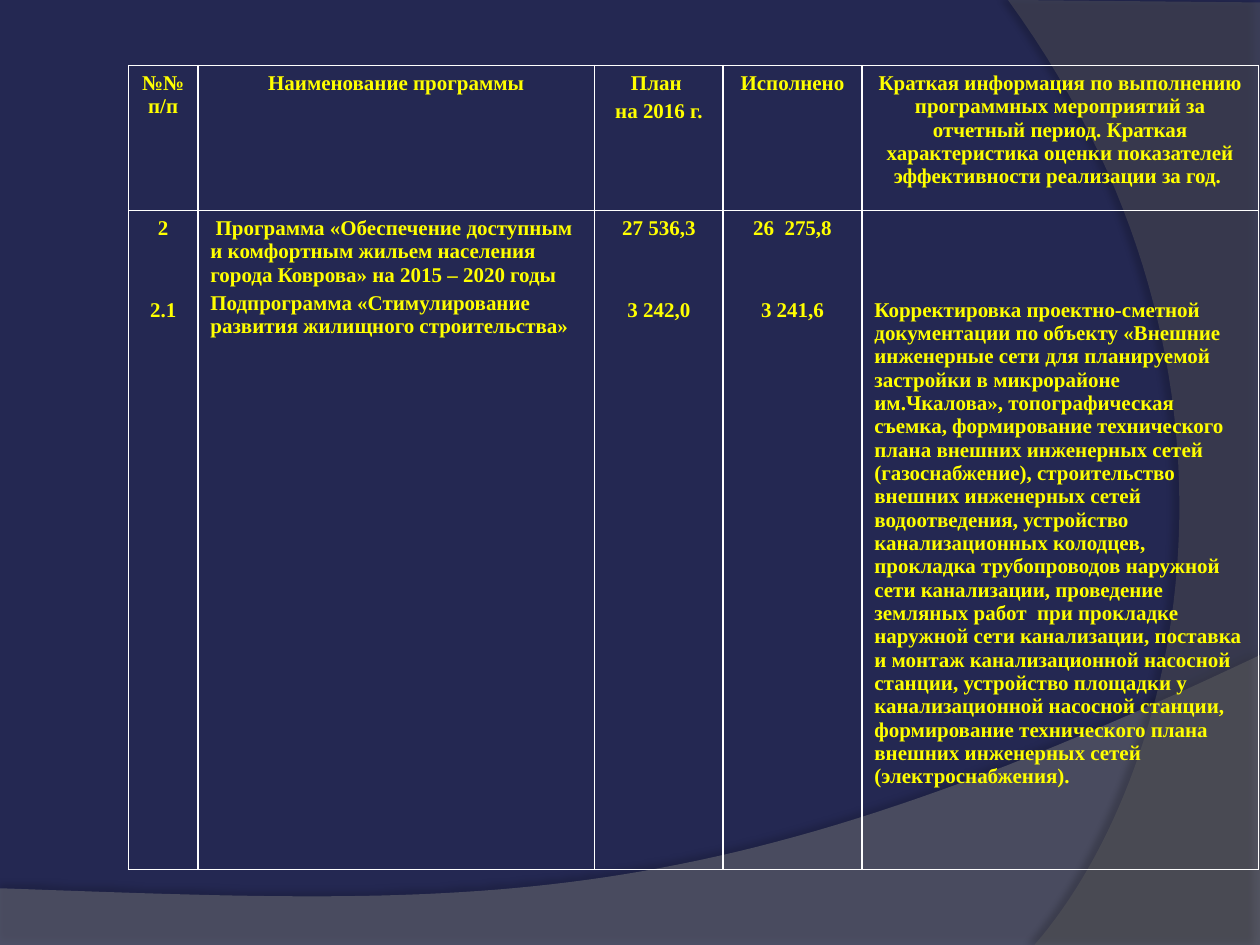
"""Build the slide with the housing programme table on a dark curved background."""
from lxml import etree
from pptx import Presentation
from pptx.dml.color import RGBColor
from pptx.enum.text import PP_ALIGN as Align
from pptx.oxml import parse_xml
from pptx.oxml.ns import nsdecls, qn
from pptx.util import Inches, Pt

FONT, SIZE, YELLOW, WHITE, NAVY = "Times New Roman", 12, "FFFF00", "FFFFFF", "242852"
TABLE_AT = (1.02, 0.52)
COLS = [0.55, 3.15, 1.02, 1.1, 3.15]
ROWS = [1.15, 5.23]
PAR_GAP, SUB_GAP, SUB_TOP = 2.7, 33.5, 0.7

HEADER = [
    "№№ п/п",
    "Наименование программы",
    "План \nна 2016 г.",
    "Исполнено",
    "Краткая информация по выполнению программных мероприятий за отчетный период. "
    "Краткая характеристика оценки показателей эффективности реализации за год. ",
]
BODY = [
    "2\n2.1",
    " Программа «Обеспечение доступным и комфортным жильем населения города Коврова» "
    "на 2015 – 2020 годы\nПодпрограмма «Стимулирование развития жилищного строительства»",
    "27 536,3\n3 242,0",
    "26  275,8\n3 241,6",
    "Корректировка проектно-сметной документации по объекту «Внешние инженерные сети "
    "для планируемой застройки в микрорайоне им.Чкалова», топографическая съемка, "
    "формирование технического плана внешних инженерных сетей (газоснабжение), "
    "строительство внешних инженерных сетей водоотведения, устройство канализационных "
    "колодцев, прокладка трубопроводов наружной сети канализации, проведение земляных "
    "работ  при прокладке наружной сети канализации, поставка и монтаж канализационной "
    "насосной станции, устройство площадки у канализационной насосной станции, "
    "формирование технического плана внешних инженерных сетей (электроснабжения).",
]
LEFT_COLS = (1, 4)

WAVES = [
    dict(corners=[(0, 7.05), (0, 7.5), (10, 7.5), (10, 5.2)],
         curve=[(10, 5.2), (5.59, 7.29), (3.91, 7.19), (0, 7.05)],
         color="7F7F7F", alpha=45, shadow=(35, 3.5, 270)),
    dict(corners=[(10, 0.02), (10, 7.5), (8.21, 7.5)],
         curve=[(8.21, 7.5), (9.35, 6.19), (10.18, 3), (8, 0)],
         color="5E5E5E", alpha=40, shadow=(45, 4, 180)),
]


def rgb(value):
    return RGBColor.from_string(value)


def bezier(points, steps=60):
    for i in range(1, steps + 1):
        t = i / steps
        weights = ((1 - t) ** 3, 3 * t * (1 - t) ** 2, 3 * t * t * (1 - t), t ** 3)
        yield tuple(sum(w * p[axis] for w, p in zip(weights, points)) for axis in (0, 1))


def add_wave(s, corners, curve, color, alpha, shadow):
    outline = [(Inches(x), Inches(y)) for x, y in [*corners, *bezier(curve)]]
    builder = s.shapes.build_freeform(*outline[0])
    builder.add_line_segments(outline[1:], close=True)
    sp = builder.convert_to_shape()
    sp.fill.solid()
    sp.fill.fore_color.rgb = rgb(color)
    sp.line.fill.background()
    sp.shadow.inherit = False
    clr = sp.fill._xPr.find(qn("a:solidFill"))[0]
    etree.SubElement(clr, qn("a:alpha")).set("val", str(alpha * 1000))
    opacity, dist, angle = shadow
    sp._element.spPr.find(qn("a:effectLst")).append(parse_xml(
        f'<a:outerShdw {nsdecls("a")} blurRad="{Pt(4)}" dist="{Pt(dist)}" '
        f'dir="{angle * 60000}" algn="ctr" rotWithShape="0"><a:srgbClr val="000000">'
        f'<a:alpha val="{opacity * 1000}"/></a:srgbClr></a:outerShdw>'))


def add_borders(cell):
    tc_pr = cell._tc.get_or_add_tcPr()
    for side in "LRTB":
        tc_pr.append(parse_xml(
            f'<a:ln{side} {nsdecls("a")} w="{Pt(1)}"><a:solidFill>'
            f'<a:srgbClr val="{WHITE}"/></a:solidFill></a:ln{side}>'))


def fill_cell(cell, text, align, gap):
    add_borders(cell)
    cell.fill.background()
    cell.text = text
    for i, p in enumerate(cell.text_frame.paragraphs):
        p.alignment = align
        if i:
            p.space_before = Pt(gap)
        for r in p.runs:
            r.font.name, r.font.size, r.font.bold = FONT, Pt(SIZE), True
            r.font.color.rgb = rgb(YELLOW)


def add_program_table(s):
    left, top = TABLE_AT
    frame = s.shapes.add_table(len(ROWS), len(COLS), Inches(left), Inches(top),
                               Inches(sum(COLS)), Inches(sum(ROWS)))
    table = frame.table
    table.first_row = table.horz_banding = False
    for row, height in zip(table.rows, ROWS):
        row.height = Inches(height)
    for c, width in enumerate(COLS):
        table.columns[c].width = Inches(width)
        is_left = c in LEFT_COLS
        fill_cell(table.cell(0, c), HEADER[c], Align.CENTER, PAR_GAP)
        fill_cell(table.cell(1, c), BODY[c], Align.LEFT if is_left else Align.CENTER,
                  PAR_GAP if is_left else SUB_GAP)
    table.cell(1, len(COLS) - 1).margin_top = Inches(SUB_TOP)


def main():
    prs = Presentation()
    prs.slide_width, prs.slide_height = Inches(10), Inches(7.5)
    s = prs.slides.add_slide(prs.slide_layouts[6])
    s.background.fill.solid()
    s.background.fill.fore_color.rgb = rgb(NAVY)
    for wave in WAVES:
        add_wave(s, **wave)
    add_program_table(s)
    prs.save("out.pptx")


if __name__ == "__main__":
    main()
